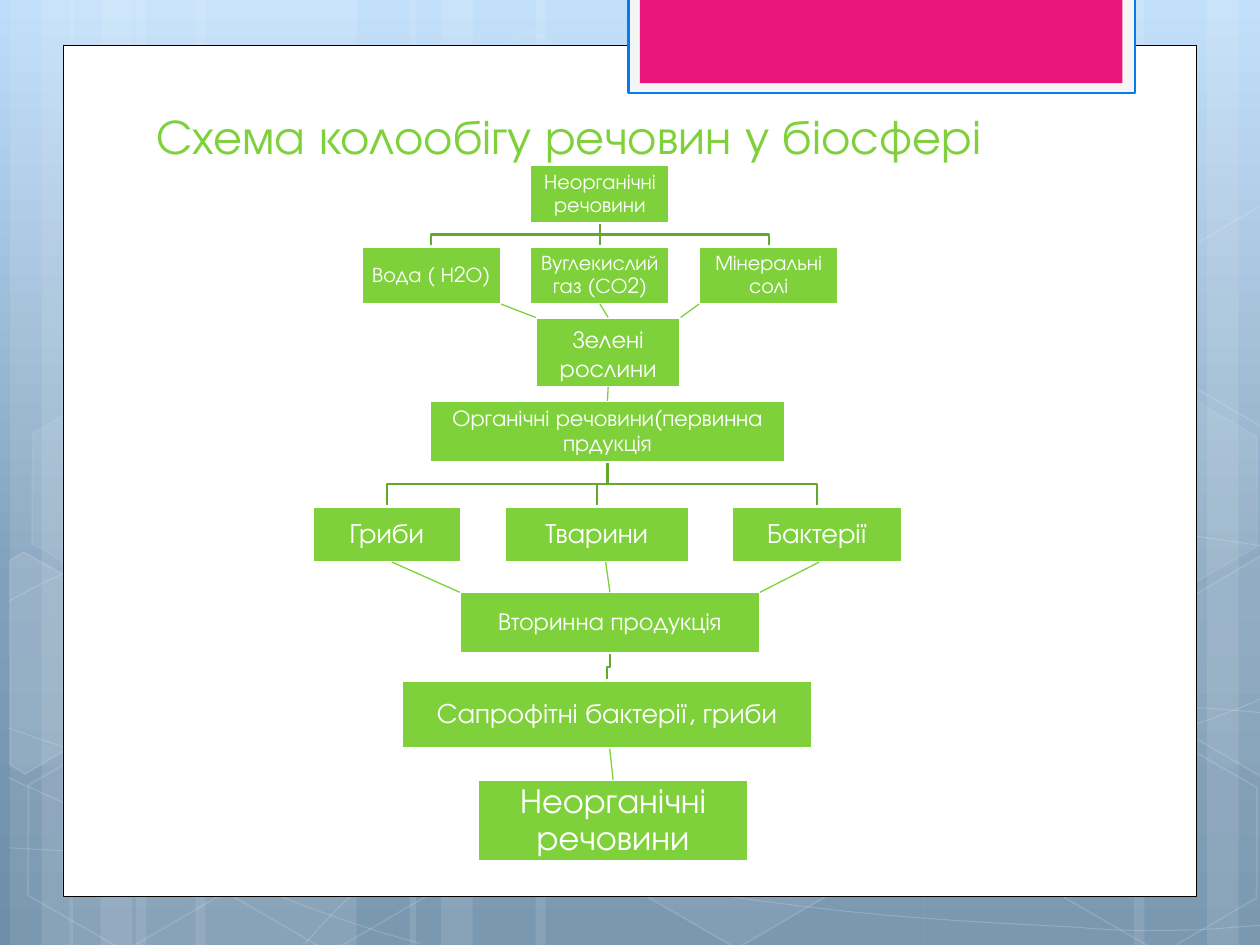
from copy import deepcopy
from dataclasses import dataclass

from lxml import etree
from pptx import Presentation
from pptx.dml.color import RGBColor
from pptx.enum import shapes, text
from pptx.oxml.ns import qn
from pptx.util import Cm, Pt


@dataclass(frozen=True)
class Theme:
    font: str = "TeX Gyre Adventor"
    green: str = "7FD13B"
    dark_green: str = "66A72F"
    pink: str = "EA157A"
    blue: str = "007EEB"
    pale: str = "F5F5F5"
    white: str = "FFFFFF"
    black: str = "000000"
    sky: tuple = ((0, "BDDDFA"), (0.62, "81A0BB"), (1, "6D8DA9"))
    title: int = 28
    large: int = 20
    medium: int = 16
    normal: int = 14
    compact: int = 13
    small: int = 12


THEME = Theme()


@dataclass(frozen=True)
class Box:
    """An area in centimetres."""
    left: float
    top: float
    width: float
    height: float

    def at(self, across, down):
        return self.left + across * self.width, self.top + down * self.height

    def inner(self, dx, dy, width, height):
        return Box(self.left + dx, self.top + dy, width, height)

    def emu(self):
        return Cm(self.left), Cm(self.top), Cm(self.width), Cm(self.height)


# Shared drawing helpers
def set_alpha(color_parent, percent):
    color = color_parent.find(qn("a:solidFill")).find(qn("a:srgbClr"))
    etree.SubElement(color, qn("a:alpha")).set("val", str(percent * 1000))


def paint(shape, fill=None, line=None, weight=1.25, fill_alpha=100, line_alpha=100):
    shape.shadow.inherit = False
    properties = shape._element.spPr
    if fill:
        shape.fill.solid()
        shape.fill.fore_color.rgb = RGBColor.from_string(fill)
        if fill_alpha < 100:
            set_alpha(properties, fill_alpha)
    else:
        shape.fill.background()
    if line:
        shape.line.color.rgb = RGBColor.from_string(line)
        shape.line.width = Pt(weight)
        if line_alpha < 100:
            set_alpha(properties.find(qn("a:ln")), line_alpha)
    else:
        shape.line.fill.background()
    return shape


def add_rect(slide, box, **look):
    return paint(slide.shapes.add_shape(shapes.MSO_SHAPE.RECTANGLE, *box.emu()), **look)


def add_outline(slide, points, close=False, **look):
    start, *rest = [(Cm(x), Cm(y)) for x, y in points]
    builder = slide.shapes.build_freeform(*start)
    builder.add_line_segments(rest, close=close)
    return paint(builder.convert_to_shape(), **look)


def write(frame, words, size, color, align, anchor, inset=None, spacing=None):
    frame.word_wrap = True
    frame.vertical_anchor = anchor
    if inset is not None:
        frame.margin_left = frame.margin_right = Cm(inset)
        frame.margin_top = frame.margin_bottom = Cm(inset)
    frame.text = words
    paragraph = frame.paragraphs[0]
    paragraph.alignment = align
    paragraph.line_spacing = spacing
    font = paragraph.runs[0].font
    font.name, font.size = THEME.font, Pt(size)
    font.color.rgb = RGBColor.from_string(color)


def bezier(points, steps=10):
    """Points along a chain of cubic curves."""
    track = [points[0]]
    for i in range(0, len(points) - 1, 3):
        for t in (step / steps for step in range(1, steps + 1)):
            weights = ((1 - t) ** 3, 3 * t * (1 - t) ** 2, 3 * t * t * (1 - t), t ** 3)
            track.append(tuple(sum(w * p[axis] for w, p in zip(weights, points[i:i + 4]))
                               for axis in (0, 1)))
    return track


# Background: gradient, light bars, curves and hexagons
BARS = [(2.74, 4.45), (0.2, 1.27), (0.84, 2.11), (3.94, 4.45), (1.4, 1.27), (2.03, 2.11),
        (18.62, 4.45), (24.33, 1.27), (22.86, 2.11), (10.8, 7.83), (8.26, 1.27), (8.89, 2.11)]
CURVES = [
    [(0.18, 17.09), (1.55, 17.17), (2.92, 17.25), (4.83, 17.22), (6.73, 17.2), (9.09, 17.15),
     (11.63, 16.89), (14.17, 16.64), (17.78, 16.15), (20.12, 15.67), (22.43, 15.19),
     (24.82, 14.43), (25.58, 14)],
    [(0.18, 12.12), (0.91, 11.71), (1.65, 11.33), (3.07, 10.95), (4.52, 10.57), (6.58, 10.01),
     (8.81, 9.83), (11.07, 9.65), (13.82, 9.63), (16.61, 9.83), (19.41, 10.03),
     (24.05, 10.82), (25.58, 11.02)],
    [(0.15, 15.67), (3.23, 17.07), (6.27, 18.47), (8.48, 19.02)],
    [(0.18, 14.68), (0.97, 14.96), (1.78, 15.24), (3.25, 15.65), (4.72, 16.03), (6.93, 16.66),
     (9.07, 17.09), (11.18, 17.53), (13.84, 17.98), (15.95, 18.24), (18.06, 18.52),
     (20.32, 18.62), (21.67, 18.69), (22.99, 18.8), (23.34, 18.75), (24, 18.75),
     (24.66, 18.72), (25.12, 18.67), (25.58, 18.64)],
    [(6.15, 19.02), (6.6, 18.52), (7.06, 18.01), (7.67, 17.55), (8.28, 17.09), (9.14, 16.59),
     (9.86, 16.23), (10.57, 15.88), (11, 15.72), (11.94, 15.47), (12.85, 15.21),
     (14.55, 14.86), (15.44, 14.68), (16.36, 14.5), (16.48, 14.5), (17.27, 14.45),
     (18.06, 14.38), (19.3, 14.3), (20.17, 14.27), (21.06, 14.25), (22.5, 14.27),
     (22.5, 14.27), (23.07, 14.27), (23.64, 14.27), (24.21, 14.27), (24.66, 14.3),
     (25.1, 14.33), (25.55, 14.38)],
]
# left, top, fill opacity, line opacity
HEXAGONS = [(8.48, 0.91, 4, 8), (12.62, 14.96, 6, 12), (0.28, 15.01, 0, 12), (0.36, 7.92, 7, 8),
            (4.42, 15.04, 0, 12), (19.13, 11.51, 10, 12), (21.18, 15.06, 0, 12),
            (21.18, 7.98, 7, 8)]
CUT_HEXAGONS = [
    (10, [(0.2, 11.3), (0.48, 11.13), (2.44, 12.24), (2.41, 14.48), (0.51, 15.6), (0.2, 15.42)]),
    (4, [(23.52, 12.32), (25.43, 11.2), (25.63, 11.33), (25.63, 15.57), (25.45, 15.67),
         (23.52, 14.55)]),
    (0, [(23.52, 5.26), (25.43, 4.14), (25.65, 4.27), (25.63, 8.51), (25.45, 8.61),
         (23.52, 7.49)]),
]


def add_background(slide, box):
    fill = slide.background.fill
    fill.gradient()
    fill.gradient_angle = 270
    stop_list = slide._element.xpath(".//p:bg//a:gsLst")[0]
    stop_list.append(deepcopy(stop_list[-1]))
    for stop, (position, color) in zip(fill.gradient_stops, THEME.sky):
        stop.position = position
        stop.color.rgb = RGBColor.from_string(color)

    for left, width in BARS:
        add_rect(slide, box.inner(left, 0, width, box.height), fill=THEME.white, fill_alpha=10)
    for curve in CURVES:
        track = [(box.left + x, box.top + y) for x, y in bezier(curve)]
        add_outline(slide, track, line=THEME.white, weight=0.5, line_alpha=20)
    for left, top, fill_alpha, line_alpha in HEXAGONS:
        hexagon = slide.shapes.add_shape(shapes.MSO_SHAPE.HEXAGON,
                                         *box.inner(left, top, 4.45, 3.86).emu())
        hexagon.adjustments[0] = 0.285
        hexagon.rotation = 30
        paint(hexagon, THEME.white if fill_alpha else None, THEME.white, 1, fill_alpha, line_alpha)
    for fill_alpha, corners in CUT_HEXAGONS:
        add_outline(slide, [(box.left + x, box.top + y) for x, y in corners], close=True,
                    fill=THEME.white if fill_alpha else None, fill_alpha=fill_alpha,
                    line=THEME.white, weight=1, line_alpha=12)


# White page with the pink tab and the title
def add_page(slide, box):
    add_rect(slide, box, fill=THEME.white, line=THEME.black, weight=0.5)
    add_rect(slide, box.inner(11.4, -0.96, 10.21, 1.93), fill=THEME.pale, line=THEME.blue)
    add_rect(slide, box.inner(11.63, -0.96, 9.73, 1.73), fill=THEME.pink)
    title = slide.shapes.add_textbox(*box.inner(1.63, 1.02, 19.5, 1.5).emu())
    write(title.text_frame, "Схема колообігу речовин у біосфері", THEME.title, THEME.green,
          text.PP_ALIGN.LEFT, text.MSO_ANCHOR.BOTTOM)


# Pieces of the scheme
def add_node(slide, box, words, size, inset=0.03, spacing=0.9, anchor=text.MSO_ANCHOR.MIDDLE):
    node = add_rect(slide, box, fill=THEME.green, line=THEME.white)
    write(node.text_frame, words, size, THEME.white, text.PP_ALIGN.CENTER, anchor, inset, spacing)
    return box


def add_link(slide, start, end, shift=0):
    """Thin line; shift moves its start sideways."""
    link = slide.shapes.add_connector(shapes.MSO_CONNECTOR.STRAIGHT, Cm(start[0] + shift),
                                      Cm(start[1]), Cm(end[0]), Cm(end[1]))
    link.line.color.rgb = RGBColor.from_string(THEME.green)
    link.line.width = Pt(0.75)
    etree.SubElement(link._element.spPr, qn("a:effectLst"))


def add_elbow(slide, parent, child):
    (x1, y1), (x2, y2) = parent.at(0.5, 1), child.at(0.5, 0)
    middle = (y1 + y2) / 2
    add_outline(slide, [(x1, y1), (x1, middle), (x2, middle), (x2, y2)], line=THEME.dark_green)


def add_branch(slide, box, parent, children, child_height, child_size):
    """Parent centred on top, children spread evenly along the bottom."""
    words, width, height, size = parent
    top_box = box.inner((box.width - width) / 2, 0, width, height)
    gap = (box.width - sum(w for _, w in children)) / (len(children) - 1)
    child_boxes, dx = [], 0
    for _, child_width in children:
        child_boxes.append(box.inner(dx, box.height - child_height, child_width, child_height))
        dx += child_width + gap
    for child_box in child_boxes:
        add_elbow(slide, top_box, child_box)
    add_node(slide, top_box, words, size)
    for child_box, (child_words, _) in zip(child_boxes, children):
        add_node(slide, child_box, child_words, child_size)
    return top_box, child_boxes


def add_scheme(slide, box):
    _, (water, gas, salts) = add_branch(
        slide, box.inner(0.99, 0, 9.61, 2.8), ("Неорганічні речовини", 2.81, 1.16, THEME.small),
        [("Вода ( Н2О)", 2.81), ("Вуглекислий газ (СО2)", 2.81), ("Мінеральні солі", 2.81)],
        1.16, THEME.small)
    organic, (fungi, animals, bacteria) = add_branch(
        slide, box.inner(0, 4.75, 11.89, 3.25),
        ("Органічні речовини(первинна прдукція", 7.16, 1.24, THEME.compact),
        [("Гриби", 3), ("Тварини", 3.71), ("Бактерії", 3.43)], 1.12, THEME.medium)

    plants = add_node(slide, box.inner(4.5, 3.07, 2.92, 1.4), "Зелені рослини", THEME.normal,
                      inset=None, spacing=None, anchor=text.MSO_ANCHOR.TOP)
    add_link(slide, gas.at(0.5, 1), plants.at(0.5, 0))
    add_link(slide, water.at(1, 1), plants.at(0, 0))
    add_link(slide, salts.at(0, 1), plants.at(1, 0))
    add_link(slide, plants.at(0.5, 1), organic.at(0.5, 0))

    secondary, saprophytes = box.inner(2.97, 8.61, 6.05, 1.22), box.inner(1.8, 10.39, 8.28, 1.37)
    add_elbow(slide, secondary, saprophytes)
    add_node(slide, secondary, "Вторинна продукція", THEME.normal)
    add_node(slide, saprophytes, "Сапрофітні бактерії, гриби", THEME.medium)
    for consumer, across, shift in ((fungi, 0, 0.1), (bacteria, 1, 0.04), (animals, 0.5, 0.18)):
        add_link(slide, consumer.at(0.5, 1), secondary.at(across, 0), shift)

    inorganic = add_node(slide, box.inner(3.33, 12.39, 5.46, 1.65), "Неорганічні речовини",
                         THEME.large)
    add_link(slide, saprophytes.at(0.5, 1), inorganic.at(0.5, 0), 0.05)


def main():
    deck = Presentation()
    deck.slide_width, deck.slide_height = Cm(25.4), Cm(19.05)
    slide = deck.slides.add_slide(deck.slide_layouts[6])
    add_background(slide, Box(0, 0, 25.4, 19.05))
    add_page(slide, Box(1.27, 0.91, 22.86, 17.17))
    add_scheme(slide, Box(6.3, 3.33, 11.89, 14.04))
    deck.save("out.pptx")


if __name__ == "__main__":
    main()
